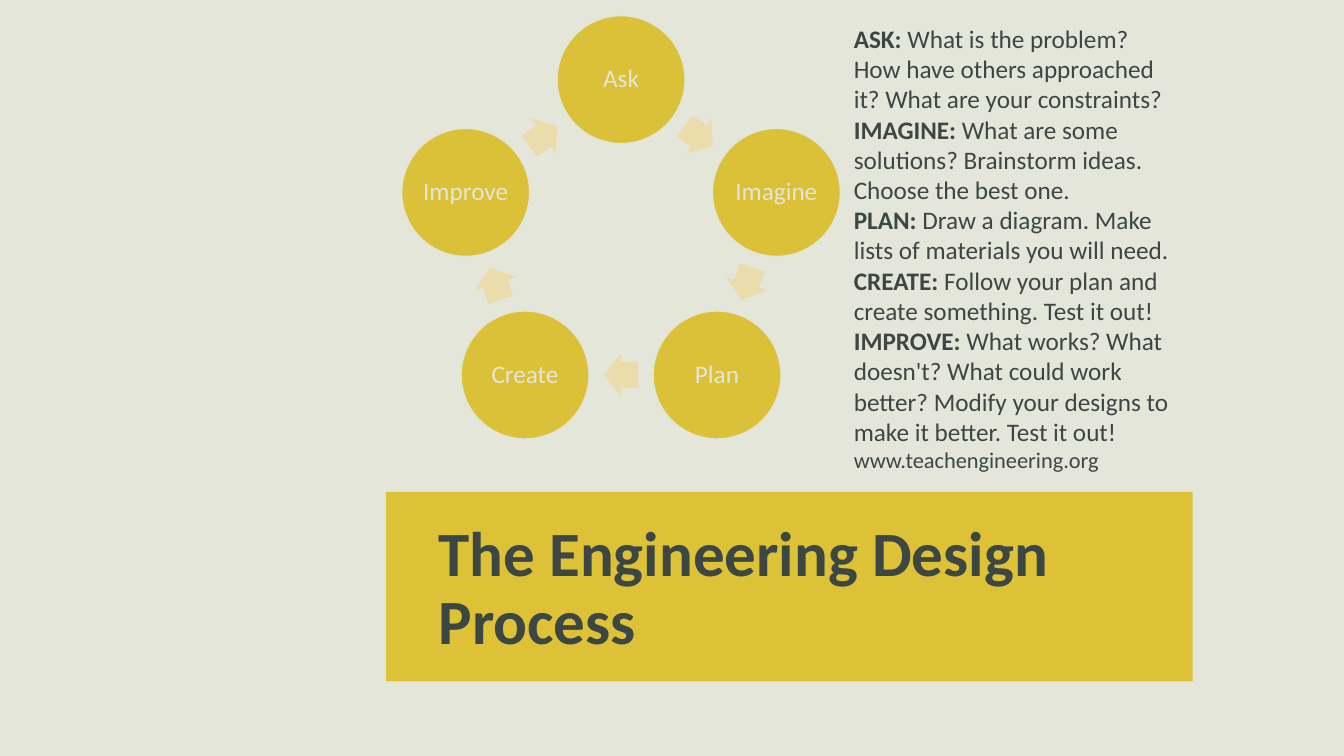
from math import cos, radians, sin

from pptx import Presentation
from pptx.dml.color import RGBColor
from pptx.enum.shapes import MSO_SHAPE
from pptx.enum.text import MSO_ANCHOR, PP_ALIGN
from pptx.util import Emu, Pt

# Content
TITLE = "The Engineering Design Process"
STEPS = ["Ask", "Imagine", "Plan", "Create", "Improve"]
QUESTIONS = [
    ("ASK: ", "What is the problem? How have others approached it? What are your constraints?"),
    ("IMAGINE: ", "What are some solutions? Brainstorm ideas. Choose the best one."),
    ("PLAN: ", "Draw a diagram. Make lists of materials you will need."),
    ("CREATE: ", "Follow your plan and create something. Test it out!"),
    ("IMPROVE: ", "What works? What doesn't? What could work better? "
                  "Modify your designs to make it better. Test it out!"),
]
WEBSITE = "www.teachengineering.org"

# Layout in px, 100 px to the inch
PX = 9144
SLIDE = (1333, 750)
BAND = (383, 488, 800, 188)
TITLE_BOX = (425, 513, 722, 145)
QUESTION_BOX = (837, 18, 340, 465)
CYCLE_CENTRE = (616, 241)
CYCLE_RADIUS = 162
NODE_SIZE = (127, 127)
ARROW_SIZE = (34, 43)

# Formats
PAPER, BAND_GOLD, NODE_GOLD, ARROW_GOLD = "E5E6DA", "DDC237", "DBC137", "EADCAB"
NODE_EDGE, INK = "E4E5D9", "3C4743"
TITLE_FONT = {"name": "Calibri", "size": Pt(45), "bold": True}
NODE_FONT = {"name": "Calibri", "size": Pt(18), "bold": False}
LABEL_FONT = {"name": "Calibri", "size": Pt(18), "bold": True}
BODY_FONT = {"name": "Calibri", "size": Pt(18), "bold": False}
WEBSITE_FONT = {"name": "Calibri", "size": Pt(16), "bold": False}


def colour(value):
    return RGBColor.from_string(value)


def emu(lengths):
    return [Emu(round(length * PX)) for length in lengths]


def around(centre, size):
    return (centre[0] - size[0] / 2, centre[1] - size[1] / 2, *size)


def add_span(para, text, font, shade):
    span = para.add_run()
    span.text = text
    for name, value in font.items():
        setattr(span.font, name, value)
    span.font.color.rgb = colour(shade)


def set_frame(frame, anchor, side, top):
    values = {"word_wrap": True, "vertical_anchor": anchor,
              "margin_left": Pt(side), "margin_right": Pt(side),
              "margin_top": Pt(top), "margin_bottom": Pt(top)}
    for name, value in values.items():
        setattr(frame, name, value)


def add_filled(page, kind, box, fill):
    shape = page.shapes.add_shape(kind, *emu(box))
    shape.shadow.inherit = False
    shape.fill.solid()
    shape.fill.fore_color.rgb = colour(fill)
    shape.line.fill.background()
    return shape


def add_node(page, centre, text):
    node = add_filled(page, MSO_SHAPE.OVAL, around(centre, NODE_SIZE), NODE_GOLD)
    node.line.color.rgb = colour(NODE_EDGE)
    node.line.width = Pt(1)
    set_frame(node.text_frame, MSO_ANCHOR.MIDDLE, 1.5, 1.5)
    para = node.text_frame.paragraphs[0]
    para.alignment = PP_ALIGN.CENTER
    para.line_spacing = 0.9
    add_span(para, text, NODE_FONT, PAPER)


def add_cycle(page):
    turn = 360 / len(STEPS)
    centres = []
    for index in range(len(STEPS)):
        angle = radians(index * turn)
        centres.append((CYCLE_CENTRE[0] + CYCLE_RADIUS * sin(angle),
                        CYCLE_CENTRE[1] - CYCLE_RADIUS * cos(angle)))
    for index, (text, start) in enumerate(zip(STEPS, centres)):
        add_node(page, start, text)
        end = centres[(index + 1) % len(centres)]
        middle = ((start[0] + end[0]) / 2, (start[1] + end[1]) / 2)
        arrow = add_filled(page, MSO_SHAPE.RIGHT_ARROW, around(middle, ARROW_SIZE), ARROW_GOLD)
        arrow.adjustments[0] = 0.6
        arrow.adjustments[1] = 0.5
        arrow.rotation = (index + 0.5) * turn


def add_title(page):
    title = page.shapes.title
    title.left, title.top, title.width, title.height = emu(TITLE_BOX)
    set_frame(title.text_frame, MSO_ANCHOR.BOTTOM, 7.2, 3.6)
    para = title.text_frame.paragraphs[0]
    para.alignment = PP_ALIGN.LEFT
    para.line_spacing = 0.9
    add_span(para, TITLE, TITLE_FONT, INK)
    # Bring the title in front of the band
    page.shapes.element.append(title.element)


def add_questions(page):
    frame = page.shapes.add_textbox(*emu(QUESTION_BOX)).text_frame
    set_frame(frame, MSO_ANCHOR.TOP, 7.2, 3.6)
    para = frame.paragraphs[0]
    for label, text in QUESTIONS:
        add_span(para, label, LABEL_FONT, INK)
        add_span(para, text, BODY_FONT, INK)
        para = frame.add_paragraph()
    add_span(para, WEBSITE, WEBSITE_FONT, INK)


def main():
    deck = Presentation()
    deck.slide_width, deck.slide_height = emu(SLIDE)
    page = deck.slides.add_slide(deck.slide_layouts[5])
    page.background.fill.solid()
    page.background.fill.fore_color.rgb = colour(PAPER)

    add_filled(page, MSO_SHAPE.RECTANGLE, BAND, BAND_GOLD)
    add_cycle(page)
    add_title(page)
    add_questions(page)
    deck.save("out.pptx")


if __name__ == "__main__":
    main()
